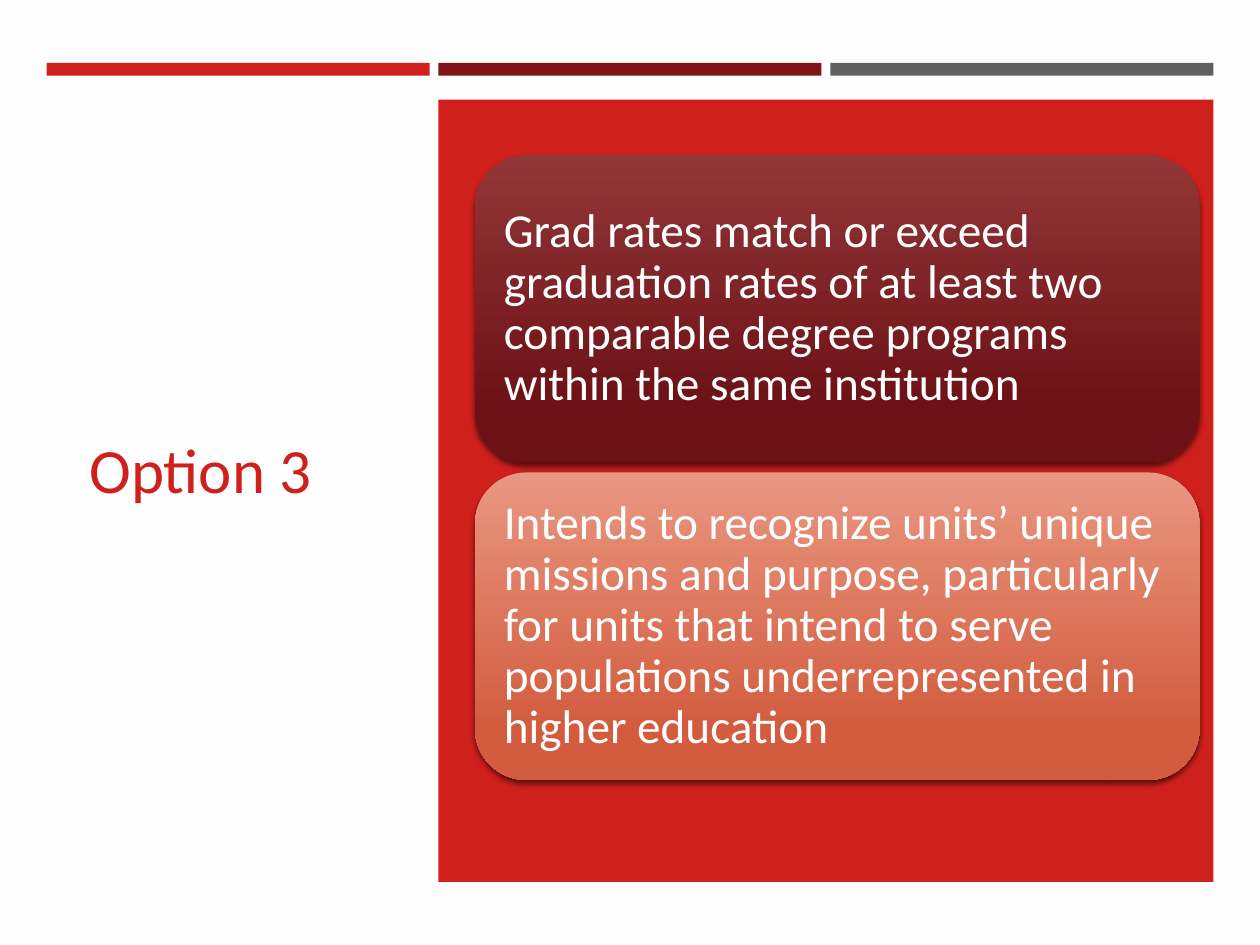
from lxml import etree
from pptx import Presentation, util as u
from pptx.dml.color import RGBColor
from pptx.enum import shapes, text
from pptx.oxml.ns import qn

HEADING = "Option 3"
RED, WHITE, PAPER = "D0201C", "FFFFFF", "FFFEFF"
BARS = [RED, "811419", "5F6062"]
CARDS = [
    ("Grad rates match or exceed graduation rates of at least two comparable "
     "degree programs within the same institution", ("923638", "6C1115")),
    ("Intends to recognize units’ unique missions and purpose, particularly for "
     "units that intend to serve populations underrepresented in higher education",
     ("E99782", "D25C3D")),
]

WIDTH, HEIGHT = 10, 7.5
MARGIN, GAP = 0.37, 0.07
BAR_WIDTH = (WIDTH - 2 * MARGIN - 2 * GAP) / 3
COLUMN = BAR_WIDTH + GAP
PANEL_LEFT = MARGIN + COLUMN
PANEL_TOP, PANEL_HEIGHT = 0.79, 6.21
CARD_LEFT, CARD_TOP = 3.77, 1.23
CARD_WIDTH, CARD_HEIGHT, CARD_GAP = 5.75, 2.44, 0.08


def color(value):
    return RGBColor.from_string(value)


def add_block(slide, kind, box):
    block = slide.shapes.add_shape(kind, *map(u.Inches, box))
    block.line.fill.background()
    block.shadow.inherit = False
    return block


def add_rectangle(slide, box, fill):
    rectangle = add_block(slide, shapes.MSO_SHAPE.RECTANGLE, box)
    rectangle.fill.solid()
    rectangle.fill.fore_color.rgb = color(fill)


def style_text(paragraph, size, fill):
    paragraph.alignment = text.PP_ALIGN.LEFT
    for run in paragraph.runs:
        run.font.name = "Calibri"
        run.font.size = u.Pt(size)
        run.font.color.rgb = color(fill)


def drop_shadow(block):
    effects = block._element.spPr.find(qn("a:effectLst"))
    shadow = etree.SubElement(effects, qn("a:outerShdw"), blurRad=str(u.Pt(3)),
                              dist=str(u.Pt(2)), dir="5400000", rotWithShape="0")
    black = etree.SubElement(shadow, qn("a:srgbClr"), val="000000")
    etree.SubElement(black, qn("a:alpha"), val="55000")


def add_card(slide, box, wording, shades):
    card = add_block(slide, shapes.MSO_SHAPE.ROUNDED_RECTANGLE, box)
    card.fill.gradient()
    card.fill.gradient_angle = 270
    for stop, position, shade in zip(card.fill.gradient_stops, (0, 0.84), shades):
        stop.position = position
        stop.color.rgb = color(shade)
    drop_shadow(card)
    frame = card.text_frame
    frame.text = wording
    frame.word_wrap = True
    frame.vertical_anchor = text.MSO_ANCHOR.MIDDLE
    frame.margin_left = frame.margin_right = u.Inches(0.11)
    frame.margin_top = frame.margin_bottom = u.Inches(0.11)
    frame.paragraphs[0].line_spacing = 0.9
    style_text(frame.paragraphs[0], 27, WHITE)


def main():
    deck = Presentation()
    deck.slide_width, deck.slide_height = u.Inches(WIDTH), u.Inches(HEIGHT)
    slide = deck.slides.add_slide(deck.slide_layouts[5])
    slide.background.fill.solid()
    slide.background.fill.fore_color.rgb = color(PAPER)

    heading = slide.shapes.title
    heading.left, heading.top = u.Inches(0.61), u.Inches(1.14)
    heading.width, heading.height = u.Inches(2.5), u.Inches(5.15)
    heading.text_frame.text = HEADING
    heading.text_frame.vertical_anchor = text.MSO_ANCHOR.MIDDLE
    style_text(heading.text_frame.paragraphs[0], 36, RED)

    for index, fill in enumerate(BARS):
        add_rectangle(slide, (MARGIN + index * COLUMN, 0.5, BAR_WIDTH, 0.1), fill)
    panel_width = WIDTH - MARGIN - PANEL_LEFT
    add_rectangle(slide, (PANEL_LEFT, PANEL_TOP, panel_width, PANEL_HEIGHT), RED)

    for index, (wording, shades) in enumerate(CARDS):
        top = CARD_TOP + index * (CARD_HEIGHT + CARD_GAP)
        add_card(slide, (CARD_LEFT, top, CARD_WIDTH, CARD_HEIGHT), wording, shades)

    deck.save("out.pptx")


if __name__ == "__main__":
    main()
